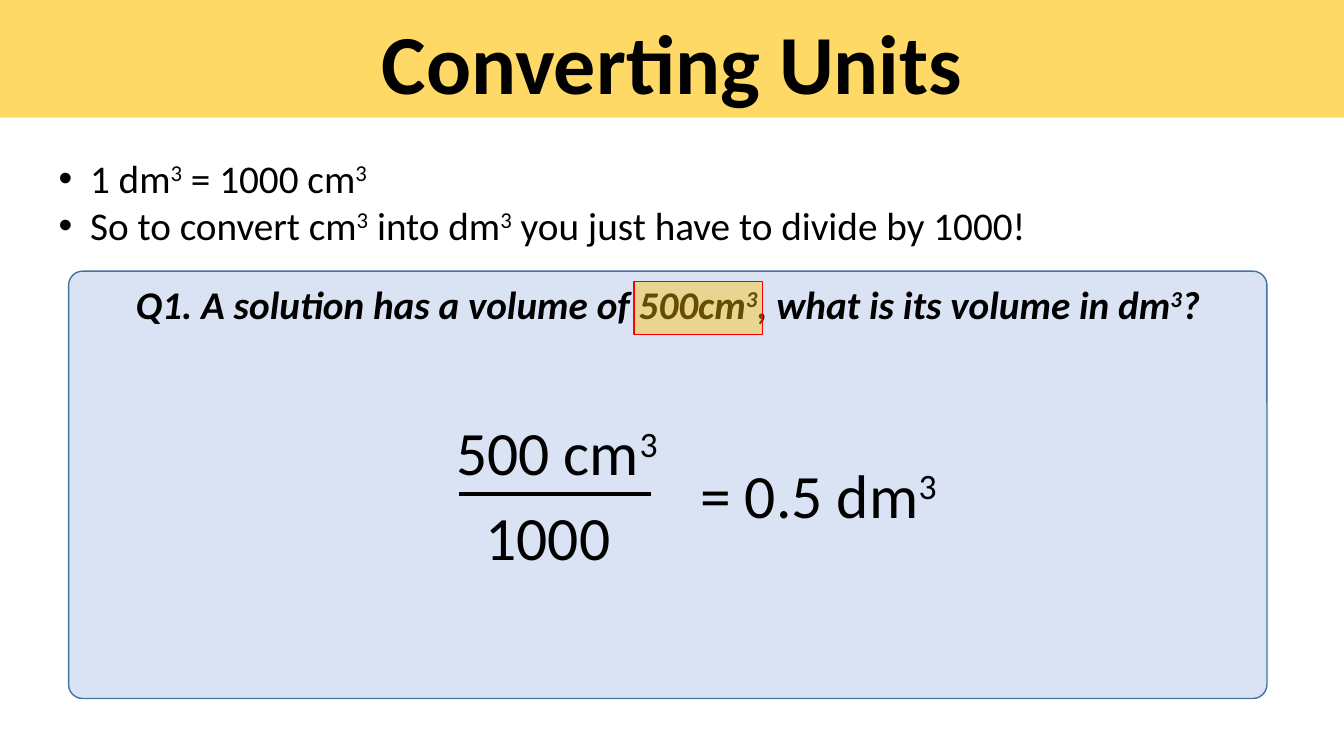
from dataclasses import dataclass

import pptx
import pptx.dml.color
import pptx.enum.shapes
import pptx.enum.text
import pptx.oxml
import pptx.oxml.ns
import pptx.util
from pptx.util import Pt

FONT = "Calibri"
SHAPE = pptx.enum.shapes.MSO_SHAPE
ANCHOR = pptx.enum.text.MSO_ANCHOR
ALIGN = pptx.enum.text.PP_ALIGN


@dataclass
class Box:
    left: float
    top: float
    width: float
    height: float

    def lengths(self) -> tuple:
        return Pt(self.left), Pt(self.top), Pt(self.width), Pt(self.height)


@dataclass
class Term:
    text: str
    box: Box


BANNER = Box(0, 0, 960, 84)
FACTS = Box(34.6, 106.5, 716.4, 75)
QUESTION = Box(49, 193.7, 856, 305.3)
HIGHLIGHT = Box(452.9, 200.9, 92, 38.2)

FACT_LINES = [
    "1 dm^3^ = 1000 cm^3^",
    "So to convert cm^3^ into dm^3^ you just have to divide by 1000!",
]
QUESTION_TEXT = "Q1. A solution has a volume of 500cm^3^, what is its volume in dm^3^?"
TERMS = [
    Term("500 cm^3^", Box(319, 292.3, 244, 60.5)),
    Term("1000", Box(339.8, 352.8, 134, 60.5)),
    Term("= 0.5 dm^3^", Box(493.2, 322.6, 213, 60.5)),
]


def rgb(value: str):
    return pptx.dml.color.RGBColor.from_string(value)


def place(sp, box: Box) -> None:
    sp.left, sp.top, sp.width, sp.height = box.lengths()


def fill(sp, color: str) -> None:
    sp.fill.solid()
    sp.fill.fore_color.rgb = rgb(color)


def write(p, text: str, size: float, bold: bool = False, italic: bool = False) -> None:
    """Add text run by run; parts between carets are superscript."""
    for i, part in enumerate(text.split("^")):
        if not part:
            continue
        r = p.add_run()
        r.text = part
        r.font.name, r.font.size = FONT, Pt(size)
        r.font.bold, r.font.italic = bold, italic
        r.font.color.rgb = rgb("000000")
        if i % 2:
            r.font._element.set("baseline", "30000")


def set_frame(tf, anchor) -> None:
    tf.word_wrap = True
    tf.auto_size = pptx.enum.text.MSO_AUTO_SIZE.NONE
    tf.vertical_anchor = anchor


def add_title(s) -> None:
    sp = s.shapes.title
    place(sp, BANNER)
    fill(sp, "FFD966")
    set_frame(sp.text_frame, ANCHOR.BOTTOM)
    p = sp.text_frame.paragraphs[0]
    p.alignment, p.line_spacing = ALIGN.CENTER, 0.9
    write(p, "Converting Units", 60, bold=True)


def add_facts(s) -> None:
    sp = s.placeholders[1]
    place(sp, FACTS)
    tf = sp.text_frame
    set_frame(tf, ANCHOR.TOP)
    for i, line in enumerate(FACT_LINES):
        p = tf.add_paragraph() if i else tf.paragraphs[0]
        p.space_before = Pt(0)
        pPr = p._p.get_or_add_pPr()
        pPr.set("marL", str(Pt(22.5)))
        pPr.set("indent", str(Pt(-22.5)))
        write(p, line, 28)


def add_panel(s, kind, box: Box, color: str, line: str):
    sp = s.shapes.add_shape(kind, *box.lengths())
    sp.shadow.inherit = False
    fill(sp, color)
    sp.line.color.rgb = rgb(line)
    sp.line.width = Pt(1)
    return sp


def add_question(s) -> None:
    sp = add_panel(s, SHAPE.ROUNDED_RECTANGLE, QUESTION, "DAE3F3", "43739E")
    sp.adjustments[0] = 0.033
    set_frame(sp.text_frame, ANCHOR.TOP)
    p = sp.text_frame.paragraphs[0]
    p.alignment = ALIGN.CENTER
    write(p, QUESTION_TEXT, 28, bold=True, italic=True)


def add_term(s, term: Term) -> None:
    tf = s.shapes.add_textbox(*term.box.lengths()).text_frame
    set_frame(tf, ANCHOR.TOP)
    write(tf.paragraphs[0], term.text, 44)


def add_fraction_bar(s) -> None:
    y = Pt(TERMS[1].box.top)
    bar = s.shapes.add_connector(
        pptx.enum.shapes.MSO_CONNECTOR.STRAIGHT, Pt(327.6), y, Pt(465), y)
    bar.line.color.rgb = rgb("000000")
    bar.line.width = Pt(3)
    bar._element.spPr.append(pptx.oxml.parse_xml(
        f"<a:effectLst {pptx.oxml.ns.nsdecls('a')}/>"))


def add_highlight(s) -> None:
    sp = add_panel(s, SHAPE.RECTANGLE, HIGHLIGHT, "FFC000", "FF0000")
    color = sp._element.spPr.find(
        pptx.oxml.ns.qn("a:solidFill")).find(pptx.oxml.ns.qn("a:srgbClr"))
    color.append(pptx.oxml.parse_xml(
        f"<a:alpha {pptx.oxml.ns.nsdecls('a')} val='40000'/>"))


def main() -> None:
    prs = pptx.Presentation()
    prs.slide_width, prs.slide_height = Pt(960), Pt(540)
    s = prs.slides.add_slide(prs.slide_layouts[1])
    add_title(s)
    add_facts(s)
    add_question(s)
    for term in TERMS:
        add_term(s, term)
    add_fraction_bar(s)
    add_highlight(s)
    prs.save("out.pptx")


if __name__ == "__main__":
    main()
